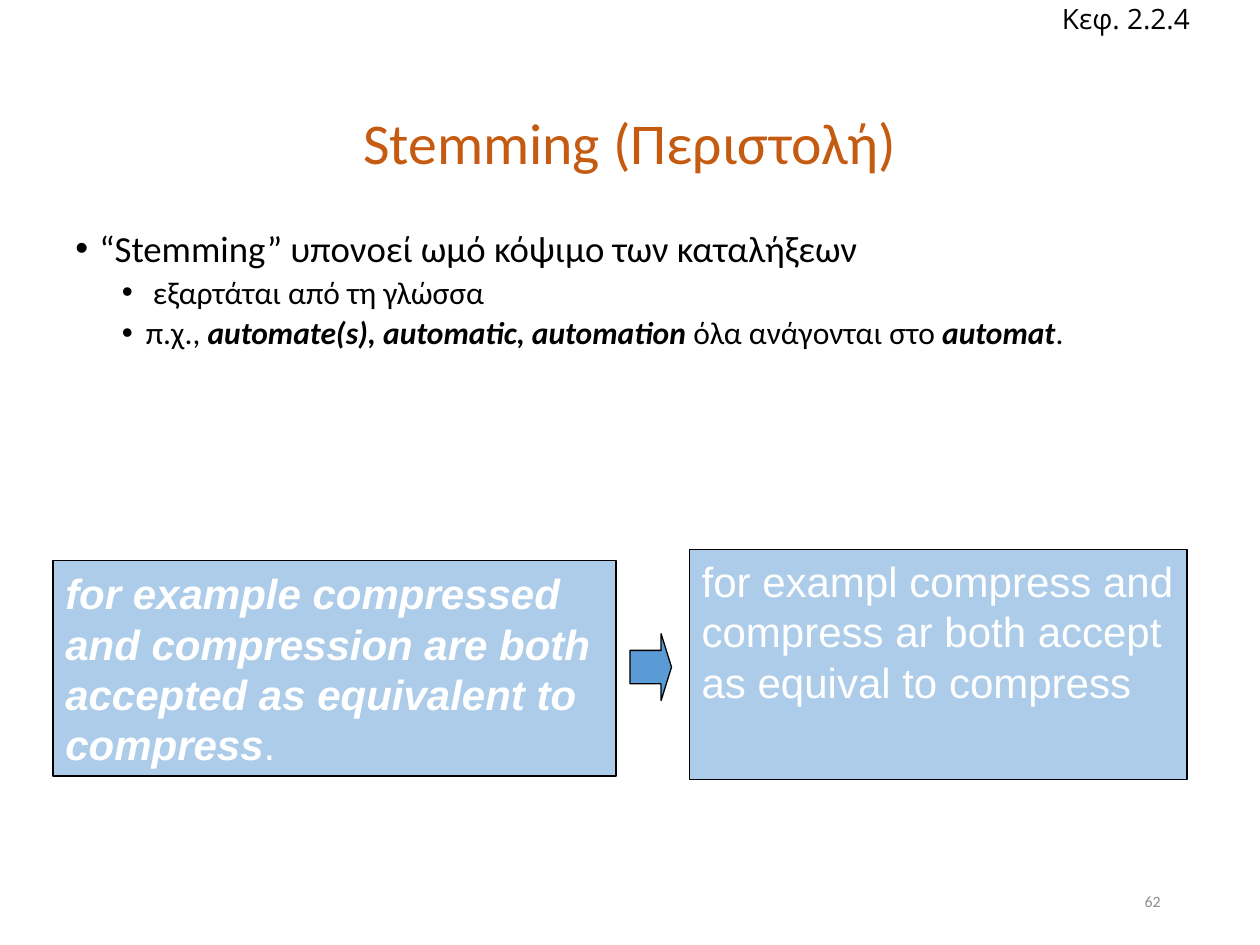
from lxml.etree import SubElement
from pptx import Presentation
from pptx.dml.color import RGBColor
from pptx.enum.shapes import MSO_SHAPE
from pptx.enum.text import MSO_ANCHOR, PP_ALIGN
from pptx.oxml.ns import qn
from pptx.util import Inches, Pt

COLORS = {"title": "C55A11", "text": "000000", "number": "8C8C8C",
          "box": "5B9BD5", "box_text": "FFFFFF", "line": "000000"}
PLAIN, STRONG = False, True  # strong runs are bold and italic


class SlideBuilder:
    def __init__(self, slide, font="Calibri"):
        self.slide = slide
        self.font = font

    def color(self, name):
        return RGBColor.from_string(COLORS[name])

    def add_runs(self, paragraph, runs, size, color, font=None):
        for text, strong in runs:
            run = paragraph.add_run()
            run.text = text
            run.font.name = font or self.font
            run.font.size = Pt(size)
            run.font.bold = run.font.italic = strong
            run.font.color.rgb = self.color(color)

    def text_box(self, left, top, width, height, anchor=MSO_ANCHOR.MIDDLE, wrap=True):
        box = self.slide.shapes.add_textbox(
            Inches(left), Inches(top), Inches(width), Inches(height))
        box.text_frame.word_wrap = wrap
        box.text_frame.vertical_anchor = anchor
        return box.text_frame

    def label(self, text, place, size, color, align=PP_ALIGN.LEFT, font=None, wrap=True):
        paragraph = self.text_box(*place, wrap=wrap).paragraphs[0]
        paragraph.alignment = align
        self.add_runs(paragraph, [(text, PLAIN)], size, color, font)

    def bullets(self, items, place):
        frame = self.text_box(*place, anchor=MSO_ANCHOR.TOP)
        for index, (level, runs) in enumerate(items):
            paragraph = frame.add_paragraph() if index else frame.paragraphs[0]
            paragraph.level = level
            paragraph.line_spacing = 0.9
            paragraph.space_before = Pt(3.8 if level else 7.5)
            properties = paragraph._p.get_or_add_pPr()
            properties.set("marL", str(Inches(0.19 + 0.37 * level)))
            properties.set("indent", str(Inches(-0.19)))
            SubElement(properties, qn("a:buFont")).set("typeface", "Arial")
            SubElement(properties, qn("a:buChar")).set("char", "•")
            self.add_runs(paragraph, runs, 18 if level else 21, "text")

    def shape(self, kind, place, opacity=100):
        shape = self.slide.shapes.add_shape(kind, *[Inches(value) for value in place])
        shape.shadow.inherit = False
        shape.fill.solid()
        shape.fill.fore_color.rgb = self.color("box")
        if opacity < 100:
            fill_color = shape._element.spPr.find(qn("a:solidFill"))[0]
            SubElement(fill_color, qn("a:alpha")).set("val", str(opacity * 1000))
        shape.line.color.rgb = self.color("line")
        shape.line.width = Pt(0.75)
        return shape

    def example_box(self, lines, place, anchor):
        frame = self.shape(MSO_SHAPE.RECTANGLE, place, opacity=50).text_frame
        frame.word_wrap = False
        frame.vertical_anchor = anchor
        for index, runs in enumerate(lines):
            paragraph = frame.add_paragraph() if index else frame.paragraphs[0]
            paragraph.alignment = PP_ALIGN.LEFT
            self.add_runs(paragraph, runs, 24, "box_text", "Arial")

    def right_arrow(self, place):
        arrow = self.shape(MSO_SHAPE.RIGHT_ARROW, place)
        arrow.adjustments[0] = 0.5
        arrow.adjustments[1] = 0.25


def main():
    presentation = Presentation()
    presentation.slide_width = Inches(10)
    presentation.slide_height = Inches(7.5)
    builder = SlideBuilder(presentation.slides.add_slide(presentation.slide_layouts[6]))

    # Title and explanation
    builder.label("Stemming (Περιστολή)", (0.69, 0.4, 8.62, 1.45), 33, "title",
                  PP_ALIGN.CENTER)
    builder.bullets([
        (0, [("“Stemming” υπονοεί ωμό κόψιμο των καταλήξεων", PLAIN)]),
        (1, [(" εξαρτάται από τη γλώσσα", PLAIN)]),
        (1, [("π.χ., ", PLAIN), ("automate(s), automatic, automation ", STRONG),
             ("όλα ανάγονται στο ", PLAIN), ("automat", STRONG), (".", PLAIN)]),
    ], (0.5, 1.78, 9, 5.42))

    # Slide number
    builder.label("62", (7.06, 6.95, 2.25, 0.4), 9, "number", PP_ALIGN.RIGHT)

    # Text before and after stemming
    builder.example_box([
        [("for example compressed", STRONG)],
        [("and compression are both", STRONG)],
        [("accepted as equivalent to", STRONG)],
        [("compress", STRONG), (".", PLAIN)],
    ], (0.42, 4.45, 4.47, 1.71), MSO_ANCHOR.MIDDLE)
    builder.example_box([
        [("for exampl compress and", PLAIN)],
        [("compress ar both accept", PLAIN)],
        [("as equival to compress", PLAIN)],
    ], (5.47, 4.36, 3.95, 1.83), MSO_ANCHOR.TOP)
    builder.right_arrow((5, 5.03, 0.33, 0.53))

    # Chapter reference
    builder.label("Κεφ. 2.2.4", (8.33, -0.04, 1.31, 0.37), 16, "text",
                  font="Open Sans", wrap=False)

    presentation.save("out.pptx")


if __name__ == "__main__":
    main()
